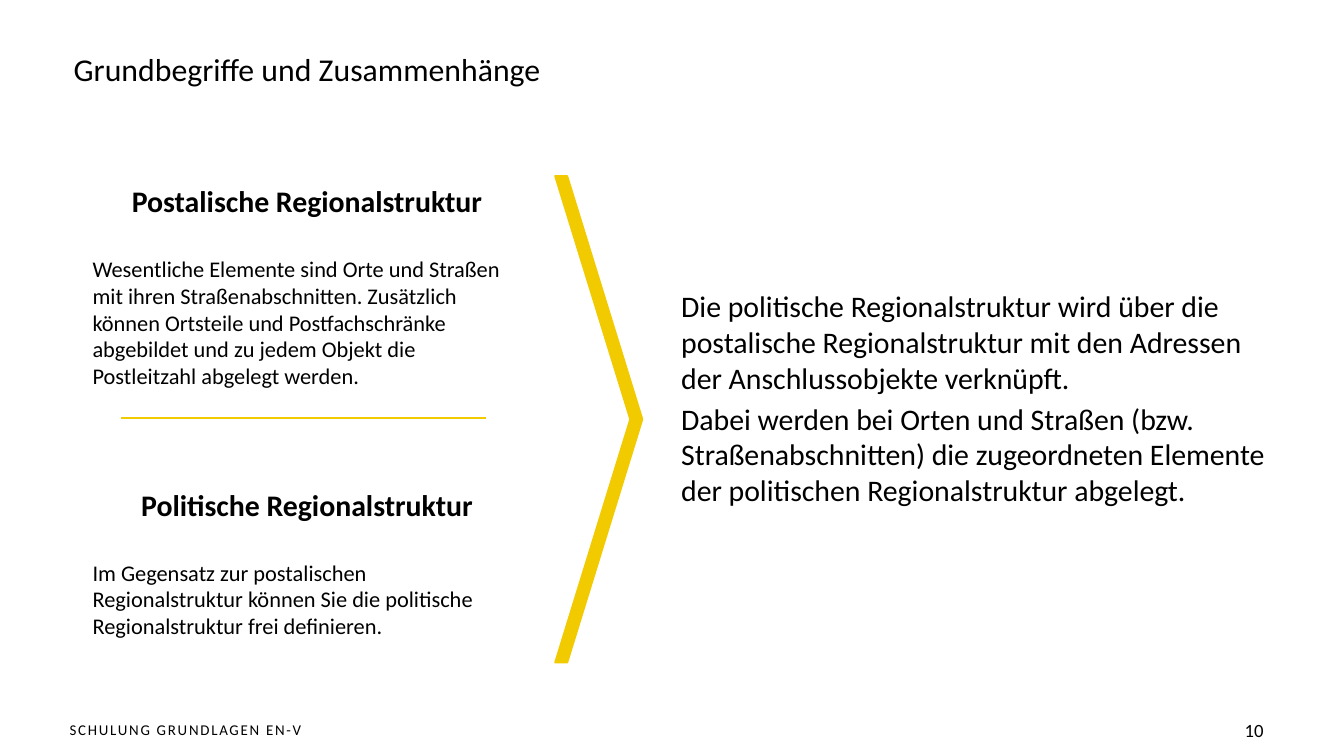
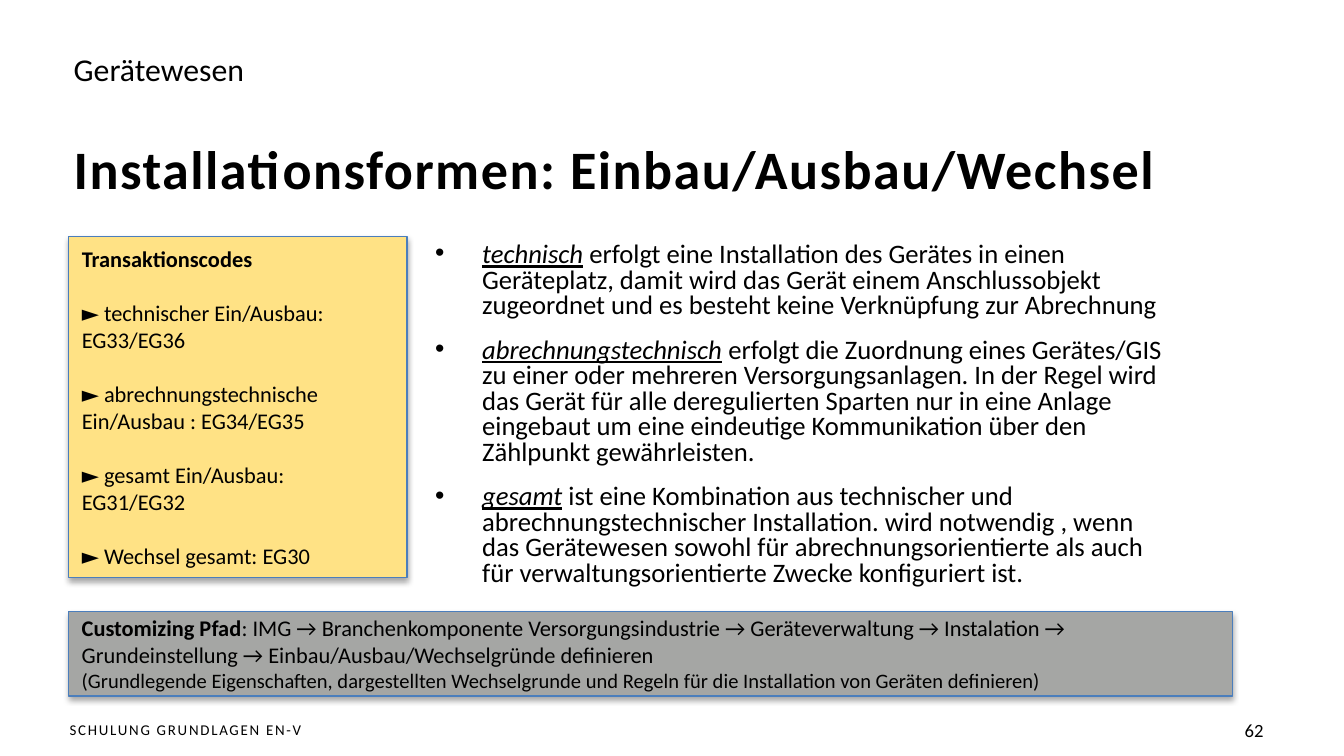
from lxml import etree
from pptx import Presentation
from pptx import util as u
from pptx.dml.color import RGBColor
from pptx.enum import shapes, text
from pptx.oxml.ns import qn

WIDTH = 10
HEIGHT = WIDTH * 9 / 16
MARGIN = 0.42
FONT = "Calibri"
COLOURS = {"ink": "000000", "accent": "F1CA00", "codes": "FFE285",
           "path": "A5A6A4", "border": "4B7EBC"}
FOOTER = "SCHULUNG GRUNDLAGEN EN-V"
LINE_FACTOR = 1.22  # line height as a share of the font size

# A paragraph is a list of (text, style) spans: b bold, i italic, u underlined.
TERMS = {
    "title": "Grundbegriffe und Zusammenhänge",
    "number": 10,
    "structures": [
        ("Postalische Regionalstruktur",
         "Wesentliche Elemente sind Orte und Straßen mit ihren Straßenabschnitten. "
         "Zusätzlich können Ortsteile und Postfachschränke abgebildet und zu jedem "
         "Objekt die Postleitzahl abgelegt werden.", 1.31, 1.65),
        ("Politische Regionalstruktur",
         "Im Gegensatz zur postalischen Regionalstruktur können Sie die politische "
         "Regionalstruktur frei definieren.", 3.57, 1.25),
    ],
    "conclusion": [
        "Die politische Regionalstruktur wird über die postalische Regionalstruktur "
        "mit den Adressen der Anschlussobjekte verknüpft.",
        "Dabei werden bei Orten und Straßen (bzw. Straßenabschnitten) die zugeordneten "
        "Elemente der politischen Regionalstruktur abgelegt.",
    ],
}
DEVICES = {
    "title": "Gerätewesen",
    "number": 62,
    "heading": "Installationsformen: Einbau/Ausbau/Wechsel",
    "forms": [
        ("technisch",
         " erfolgt eine Installation des Gerätes in einen Geräteplatz, damit wird das "
         "Gerät einem Anschlussobjekt zugeordnet und es besteht keine Verknüpfung zur "
         "Abrechnung"),
        ("abrechnungstechnisch",
         " erfolgt die Zuordnung eines Gerätes/GIS zu einer oder mehreren "
         "Versorgungsanlagen. In der Regel wird das Gerät für alle deregulierten Sparten "
         "nur in eine Anlage eingebaut um eine eindeutige Kommunikation über den "
         "Zählpunkt gewährleisten."),
        ("gesamt",
         " ist eine Kombination aus technischer und abrechnungstechnischer Installation. "
         "wird notwendig , wenn das Gerätewesen sowohl für abrechnungsorientierte als "
         "auch für verwaltungsorientierte Zwecke konfiguriert ist."),
    ],
    "codes_heading": "Transaktionscodes",
    "codes": ["► technischer Ein/Ausbau: EG33/EG36",
              "► abrechnungstechnische Ein/Ausbau : EG34/EG35",
              "► gesamt Ein/Ausbau: EG31/EG32",
              "► Wechsel gesamt: EG30"],
    "path": [("Customizing Pfad", "b"),
             (": IMG → Branchenkomponente Versorgungsindustrie → Geräteverwaltung → "
              "Instalation → Grundeinstellung → Einbau/Ausbau/Wechselgründe definieren", "")],
    "path_note": "(Grundlegende Eigenschaften, dargestellten Wechselgrunde und Regeln "
                 "für die Installation von Geräten definieren)",
}


def colour(name):
    return RGBColor.from_string(COLOURS[name])


def add_box(page, left, top, width, height, anchor=text.MSO_ANCHOR.TOP):
    box = page.shapes.add_textbox(*map(u.Inches, (left, top, width, height)))
    box.text_frame.word_wrap = True
    box.text_frame.vertical_anchor = anchor
    return box


def write(box, spans, size, align=text.PP_ALIGN.LEFT, before=0, spacing=0):
    """Append a paragraph of (text, style) spans; the first one fills the empty paragraph."""
    frame = box.text_frame
    para = frame.paragraphs[0]
    if para.runs:
        para = frame.add_paragraph()
    para.alignment = align
    para.space_before = u.Pt(before)
    for words, style in spans:
        span = para.add_run()
        span.text = words
        font = span.font
        font.name, font.size = FONT, u.Pt(size)
        font.color.rgb = colour("ink")
        font.bold, font.italic, font.underline = (mark in style for mark in "biu")
        if spacing:
            span._r.get_or_add_rPr().set("spc", str(round(spacing * 100)))
    return para


def indent(para, left, first=0):
    properties = para._p.get_or_add_pPr()
    properties.set("marL", str(u.Inches(left)))
    properties.set("indent", str(u.Inches(first)))
    return properties


def add_bullet(para):
    properties = indent(para, 0.38, -0.35)
    etree.SubElement(properties, qn("a:buFont"), typeface="Arial")
    etree.SubElement(properties, qn("a:buChar"), char="•")


def add_title(page, words, top, width, height, size, style="", spacing=0):
    box = add_box(page, MARGIN, top, width, height)
    indent(write(box, [(words, style)], size, spacing=spacing), 0.03)


def add_page(deck, content):
    """Add a blank page with its title, footer and page number."""
    page = deck.slides.add_slide(deck.slide_layouts[6])
    add_title(page, content["title"], 0.32, 5.49, 0.39, 17)
    middle = text.MSO_ANCHOR.MIDDLE
    footer = add_box(page, MARGIN, 5.28, 4.58, 0.3, middle)
    write(footer, [(FOOTER, "")], 8, spacing=0.9)
    number = add_box(page, 7.17, 5.28, 2.33, 0.3, middle)
    write(number, [(str(content["number"]), "")], 10, text.PP_ALIGN.RIGHT)
    return page


def add_shape(page, kind, place, fill, line, weight):
    shape = page.shapes.add_shape(kind, *map(u.Inches, place))
    shape.shadow.inherit = False
    shape.fill.solid()
    shape.fill.fore_color.rgb = colour(fill)
    shape.line.color.rgb = colour(line)
    shape.line.width = u.Pt(weight)
    return shape


def add_panel(page, top, width, height, fill):
    """Add a bordered rectangle with a soft shadow below it."""
    panel = add_shape(page, shapes.MSO_SHAPE.RECTANGLE,
                      (0.51, top, width, height), fill, "border", 0.75)
    effects = panel._element.spPr.find(qn("a:effectLst"))
    shadow = etree.SubElement(effects, qn("a:outerShdw"), blurRad=str(u.Pt(3.1)),
                              dist=str(u.Pt(1.8)), dir="5400000", rotWithShape="0")
    tint = etree.SubElement(shadow, qn("a:srgbClr"), val=COLOURS["ink"])
    etree.SubElement(tint, qn("a:alpha"), val="35000")
    panel.text_frame.word_wrap = True
    panel.text_frame.vertical_anchor = text.MSO_ANCHOR.MIDDLE
    return panel


def build_terms(deck):
    page = add_page(deck, TERMS)
    conclusion = add_box(page, 4.97, 1.47, 4.64, 3.62)
    conclusion.text_frame.margin_top = u.Inches(0.67)
    for index, words in enumerate(TERMS["conclusion"]):
        write(conclusion, [(words, "")], 16, before=2.8 if index else 0)

    for heading, words, top, height in TERMS["structures"]:
        box = add_box(page, 0.59, top, 3.39, height)
        write(box, [(heading, "b")], 16, text.PP_ALIGN.CENTER)
        write(box, [(words, "")], 12, before=16 * LINE_FACTOR)

    divider = page.shapes.add_connector(
        shapes.MSO_CONNECTOR.STRAIGHT, *map(u.Inches, (3.62, 3.11, 0.9, 3.11)))
    divider.line.color.rgb = colour("accent")
    divider.line.width = u.Pt(1.5)
    etree.SubElement(divider._element.spPr, qn("a:effectLst"))

    chevron = add_shape(page, shapes.MSO_SHAPE.CHEVRON,
                        (4.13, 1.31, 0.65, 3.62), "accent", "accent", 0.9)
    chevron.adjustments[0] = 0.86


def build_devices(deck):
    page = add_page(deck, DEVICES)
    add_title(page, DEVICES["heading"], 0.96, 8.39, 0.55, 29, "b", 0.8)

    forms = add_box(page, 3.11, 1.76, 5.7, 3.33)
    for index, (term, words) in enumerate(DEVICES["forms"]):
        para = write(forms, [(term, "iu"), (words, "")], 14.3, before=10 if index else 0)
        para.line_spacing = 0.8
        add_bullet(para)

    codes = add_panel(page, 1.76, 2.52, 2.54, "codes")
    codes.text_frame.margin_right = u.Inches(0.2)
    write(codes, [(DEVICES["codes_heading"], "b")], 12)
    for words in DEVICES["codes"]:
        write(codes, [(words, "")], 12, before=12 * LINE_FACTOR)

    menu = add_panel(page, 4.55, 8.66, 0.63, "path")
    write(menu, DEVICES["path"], 12)
    write(menu, [(DEVICES["path_note"], "")], 11)


def main():
    deck = Presentation()
    deck.slide_width, deck.slide_height = u.Inches(WIDTH), u.Inches(HEIGHT)
    build_terms(deck)
    build_devices(deck)
    deck.save("out.pptx")


if __name__ == "__main__":
    main()
